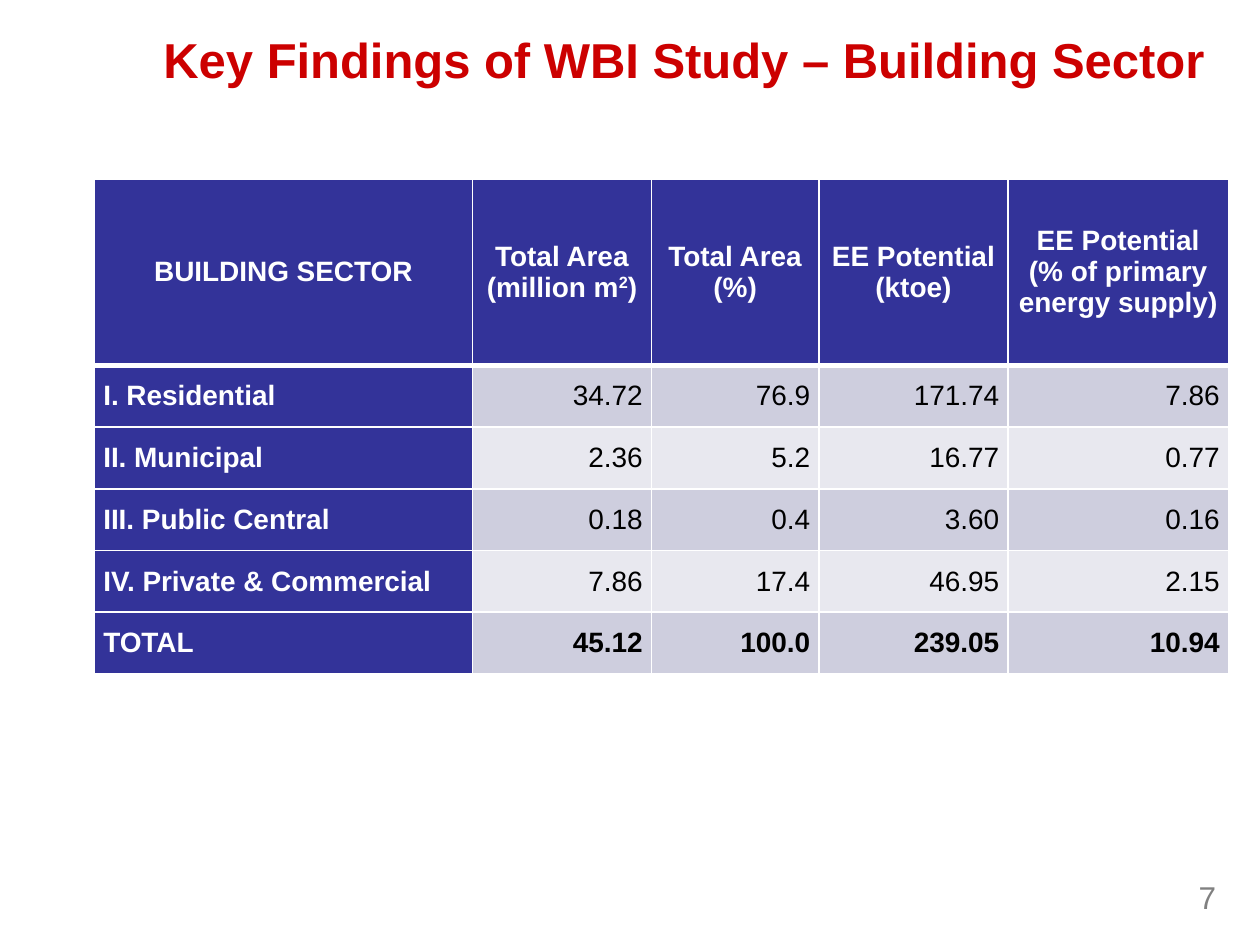
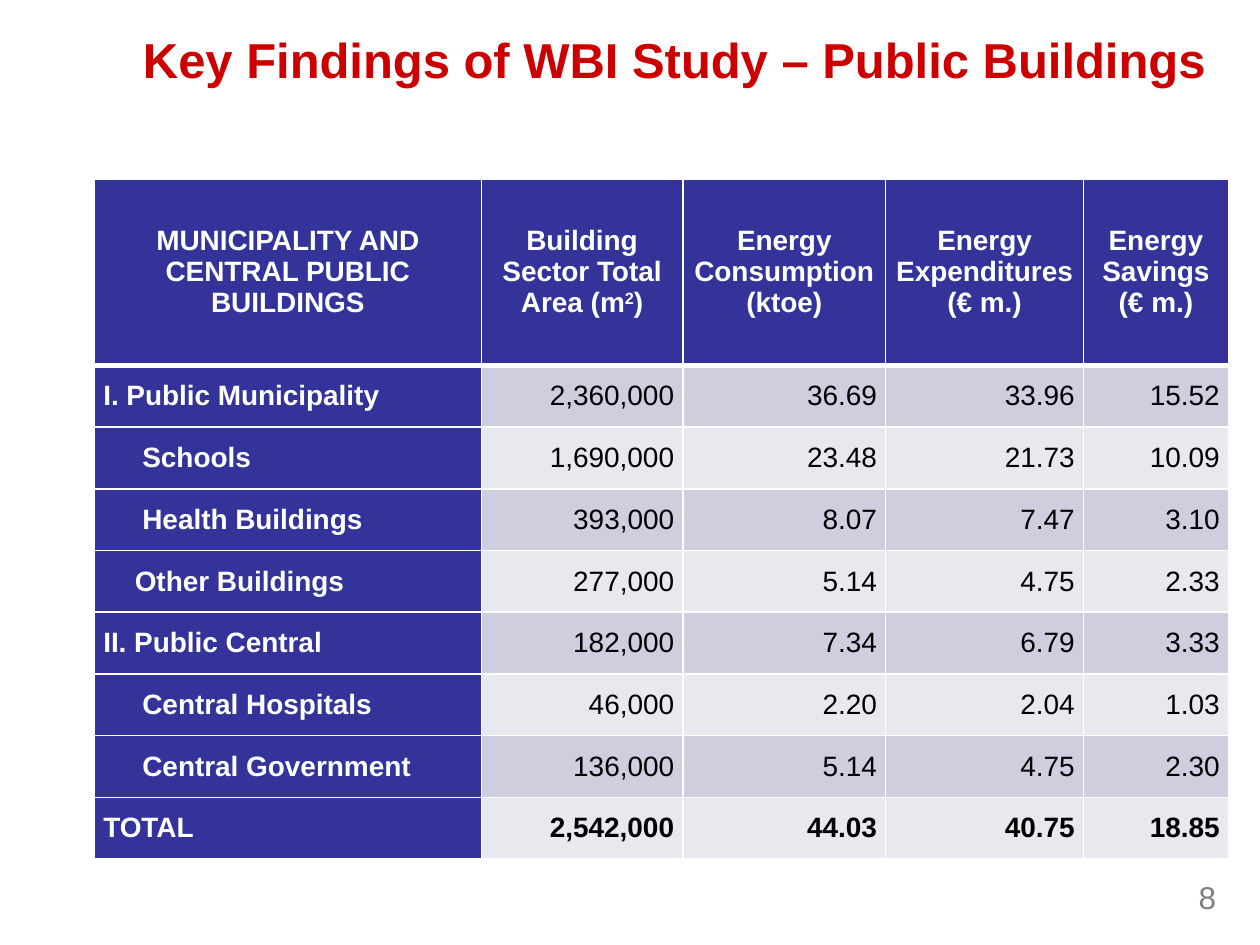
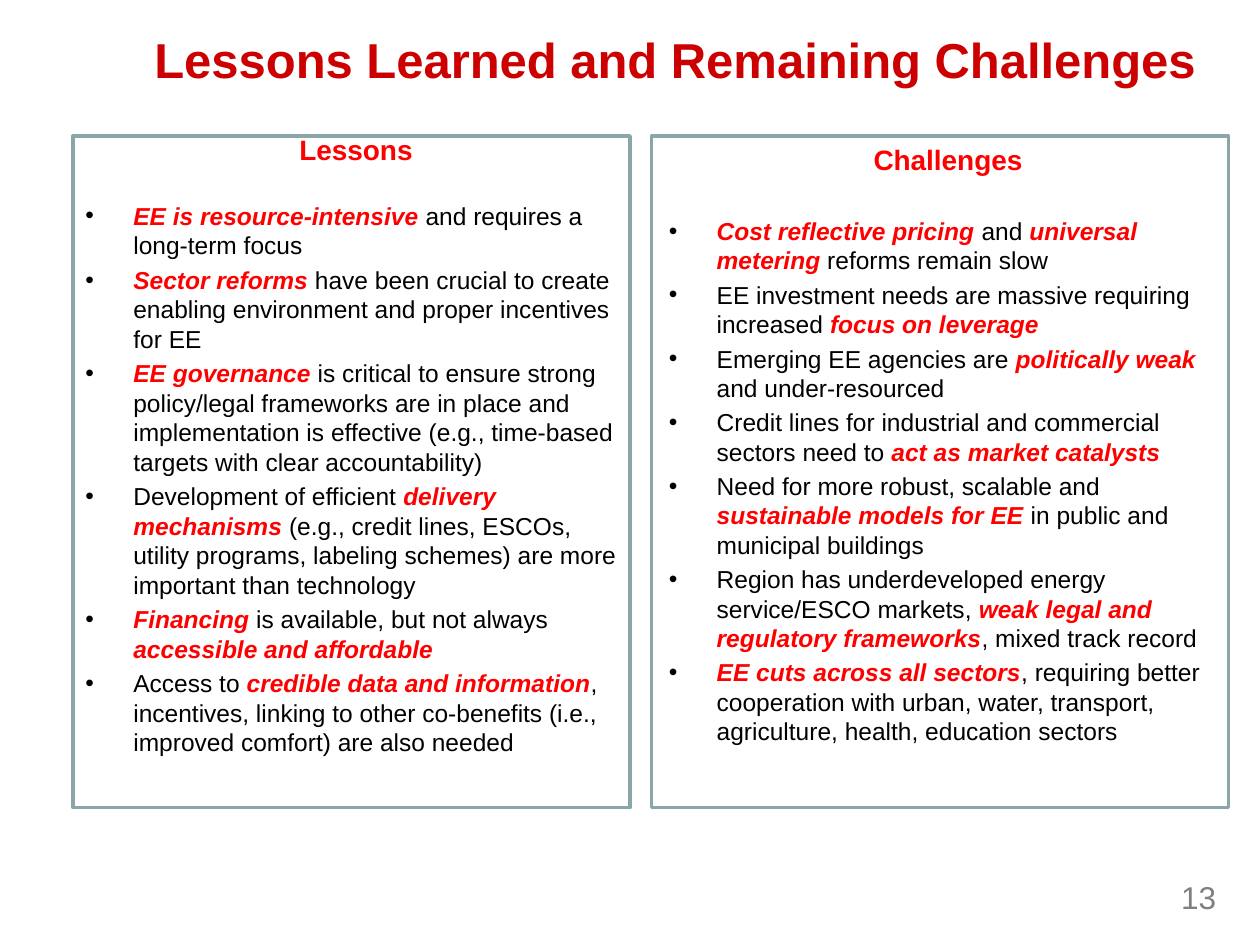
from lxml.etree import SubElement
from pptx import Presentation
from pptx.dml.color import RGBColor
from pptx.enum.shapes import MSO_SHAPE
from pptx.enum.text import MSO_ANCHOR, MSO_AUTO_SIZE, PP_ALIGN
from pptx.oxml import parse_xml
from pptx.oxml.ns import nsdecls, qn
from pptx.util import Inches, Pt

WHITE, BLACK, RED = "FFFFFF", "000000", "FF0000"
NAVY, FRAME = "333399", "8AA6A8"
BANDS = ("CECEDE", "E8E8EF")
TITLE_STYLE = {"size": 28, "color": "CC0000", "bold": True}
NUMBER_STYLE = {"size": 18, "color": "808080"}
LABEL_STYLE = {"size": 16, "color": WHITE, "bold": True}
VALUE_STYLE = {"size": 16, "color": BLACK, "bold": False}
TOTAL_STYLE = {"size": 16, "color": BLACK, "bold": True}
HEADING_STYLE = {"size": 16, "color": RED, "bold": True}
BODY_STYLE = {"size": 14, "color": BLACK}
STRESS_STYLE = {"size": 14, "color": RED, "bold": True, "italic": True}

HEADER_HEIGHT, ROW_HEIGHT = 1.48, 0.49
HANGING = 0.38

TABLE_PAGES = [
    {
        "title": "Key Findings of WBI Study – Building Sector",
        "title_place": (1.08, 0.17, 8.58, 0.58),
        "number": "7",
        "widths": (3, 1.42, 1.33, 1.5, 1.75),
        "header": ("BUILDING SECTOR", "Total Area (million m^2^)", "Total Area (%)",
                   "EE Potential (ktoe)", "EE Potential\n(% of primary energy supply)"),
        "indents": {},
        "rows": [
            ("I. Residential", "34.72", "76.9", "171.74", "7.86"),
            ("II. Municipal", "2.36", "5.2", "16.77", "0.77"),
            ("III. Public Central", "0.18", "0.4", "3.60", "0.16"),
            ("IV. Private & Commercial", "7.86", "17.4", "46.95", "2.15"),
            ("TOTAL", "45.12", "100.0", "239.05", "10.94"),
        ],
    },
    {
        "title": "Key Findings of WBI Study – Public Buildings",
        "title_place": (0.75, 0.17, 8.92, 0.58),
        "number": "8",
        "widths": (3.07, 1.6, 1.61, 1.57, 1.15),
        "header": ("MUNICIPALITY AND\nCENTRAL PUBLIC\nBUILDINGS",
                   "Building Sector Total Area (m^2^)", "Energy Consumption (ktoe)",
                   "Energy Expenditures (€ m.)", "Energy Savings\n(€ m.)"),
        "indents": {"Schools": 0.31, "Health Buildings": 0.31, "Other Buildings": 0.25,
                    "Central Hospitals": 0.31, "Central Government": 0.31},
        "rows": [
            ("I. Public Municipality", "2,360,000", "36.69", "33.96", "15.52"),
            ("Schools", "1,690,000", "23.48", "21.73", "10.09"),
            ("Health Buildings", "393,000", "8.07", "7.47", "3.10"),
            ("Other Buildings", "277,000", "5.14", "4.75", "2.33"),
            ("II. Public Central", "182,000", "7.34", "6.79", "3.33"),
            ("Central Hospitals", "46,000", "2.20", "2.04", "1.03"),
            ("Central Government", "136,000", "5.14", "4.75", "2.30"),
            ("TOTAL", "2,542,000", "44.03", "40.75", "18.85"),
        ],
    },
]

LESSONS_PAGE = {
    "title": "Lessons Learned and Remaining Challenges",
    "title_place": (0.67, 0.25, 8.92, 0.5),
    "number": "13",
    "panels": [
        {
            "heading": "Lessons",
            "frame": (0.58, 1.08, 4.42, 5.33),
            "place": (0.58, 1, 4.49, 5.33),
            "heading_gap": 20,
            "gap": 3,
            "points": [
                "*EE is resource-intensive *and requires a long-term focus",
                "*Sector reforms *have been crucial to create enabling environment "
                "and proper incentives for EE",
                "*EE governance *is critical to ensure strong policy/legal frameworks are in "
                "place and implementation is effective (e.g., time-based targets with clear "
                "accountability)",
                "Development of efficient *delivery mechanisms *(e.g., credit lines, ESCOs, "
                "utility programs, labeling schemes) are more important than technology",
                "*Financing* is available, but not always *accessible and affordable*",
                "Access to *credible data and information*, incentives, linking to other "
                "co-benefits (i.e., improved comfort) are also needed",
            ],
        },
        {
            "heading": "Challenges",
            "frame": (5.17, 1.08, 4.58, 5.33),
            "place": (5.21, 1.08, 4.63, 4.5),
            "heading_gap": 23,
            "gap": 2.8,
            "points": [
                "*Cost reflective pricing *and *universal metering *reforms remain slow",
                "EE investment needs are massive requiring increased *focus on leverage*",
                "Emerging EE agencies are *politically weak *and under-resourced",
                "Credit lines for industrial and commercial sectors need to "
                "*act as market catalysts*",
                "Need for more robust, scalable and *sustainable models for EE *in public "
                "and municipal buildings",
                "Region has underdeveloped energy service/ESCO markets, *weak legal and "
                "regulatory frameworks*, mixed track record",
                "*EE cuts across all sectors*, requiring better cooperation with urban, "
                "water, transport, agriculture, health, education sectors",
            ],
        },
    ],
}


def rgb(value):
    """Return the colour for a hex string."""
    return RGBColor.from_string(value)


def inches(values):
    """Turn a row of numbers into lengths."""
    return [Inches(value) for value in values]


def add_span(para, text, style):
    """Add one formatted run to a paragraph."""
    span = para.add_run()
    span.text = text
    values = {"name": "Arial", **style, "size": Pt(style["size"])}
    span.font.color.rgb = rgb(values.pop("color"))
    for name, value in values.items():
        setattr(span.font, name, value)
    return span


def write_lines(frame, text, style, align):
    """Write one paragraph per line, raising what stands between carets."""
    for index, line in enumerate(text.split("\n")):
        para = frame.add_paragraph() if index else frame.paragraphs[0]
        para.alignment = align
        for part, words in enumerate(line.split("^")):
            span = add_span(para, words, style)
            if part % 2:
                span.font._element.set("baseline", "30000")


def add_text_box(page, place):
    """Add a wrapping text box and return its frame."""
    frame = page.shapes.add_textbox(*inches(place)).text_frame
    frame.word_wrap = True
    return frame


def add_page(deck, content):
    """Add a page with its title and number."""
    page = deck.slides.add_slide(deck.slide_layouts[5])
    title = page.shapes.title
    title.left, title.top, title.width, title.height = inches(content["title_place"])
    frame = title.text_frame
    frame.auto_size = MSO_AUTO_SIZE.NONE
    frame.vertical_anchor = MSO_ANCHOR.BOTTOM
    write_lines(frame, content["title"], TITLE_STYLE, PP_ALIGN.RIGHT)
    number = add_text_box(page, (8.25, 6.92, 1.5, 0.43))
    write_lines(number, content["number"], NUMBER_STYLE, PP_ALIGN.RIGHT)
    return page


def fill_cell(cell, text, style, align, fill, bottom=1, top=1):
    """Write a cell and set its margins, white borders and fill."""
    cell.margin_left = cell.margin_right = Inches(0.07)
    cell.margin_top = cell.margin_bottom = 0
    cell.vertical_anchor = MSO_ANCHOR.MIDDLE
    write_lines(cell.text_frame, text, style, align)
    properties = cell._tc.get_or_add_tcPr()
    for side, width in (("L", 1), ("R", 1), ("T", top), ("B", bottom)):
        properties.append(parse_xml(
            f'<a:ln{side} {nsdecls("a")} w="{Pt(width)}"><a:solidFill>'
            f'<a:srgbClr val="{WHITE}"/></a:solidFill></a:ln{side}>'))
    cell.fill.solid()
    cell.fill.fore_color.rgb = rgb(fill)


def add_table_page(deck, content):
    """Add a page with a table of findings."""
    page = add_page(deck, content)
    rows, widths = content["rows"], content["widths"]
    height = HEADER_HEIGHT + ROW_HEIGHT * len(rows)
    table = page.shapes.add_table(
        len(rows) + 1, len(widths), *inches((0.75, 1.42, sum(widths), height))).table
    for column, width in zip(table.columns, widths):
        column.width = Inches(width)
    for index, row in enumerate(table.rows):
        row.height = Inches(ROW_HEIGHT if index else HEADER_HEIGHT)
    for column, text in enumerate(content["header"]):
        fill_cell(table.cell(0, column), text, LABEL_STYLE, PP_ALIGN.CENTER, NAVY, bottom=3)
    for index, (label, *values) in enumerate(rows):
        top = 1 if index else 3
        head = table.cell(index + 1, 0)
        fill_cell(head, label, LABEL_STYLE, PP_ALIGN.LEFT, NAVY, top=top)
        head.margin_left = Inches(0.07 + content["indents"].get(label, 0))
        style = TOTAL_STYLE if label == "TOTAL" else VALUE_STYLE
        for column, value in enumerate(values, 1):
            fill_cell(table.cell(index + 1, column), value, style, PP_ALIGN.RIGHT,
                      BANDS[index % 2], top=top)


def add_point(frame, text, gap):
    """Add a bulleted paragraph, stressing what stands between asterisks."""
    para = frame.add_paragraph()
    properties = para._p.get_or_add_pPr()
    properties.set("marL", str(Inches(HANGING)))
    properties.set("indent", str(-Inches(HANGING)))
    colour = SubElement(properties, qn("a:buClr"))
    SubElement(colour, qn("a:srgbClr"), val=BLACK)
    SubElement(properties, qn("a:buFont"), typeface="Arial")
    SubElement(properties, qn("a:buChar"), char="•")
    para.space_before = Pt(gap)
    for part, words in enumerate(text.split("*")):
        if words:
            add_span(para, words, STRESS_STYLE if part % 2 else BODY_STYLE)


def add_panel(page, panel):
    """Add a framed panel with a heading and bullets."""
    outline = page.shapes.add_shape(MSO_SHAPE.RECTANGLE, *inches(panel["frame"]))
    outline.shadow.inherit = False
    outline.fill.background()
    outline.line.color.rgb = rgb(FRAME)
    outline.line.width = Pt(2)
    frame = add_text_box(page, panel["place"])
    write_lines(frame, panel["heading"], HEADING_STYLE, PP_ALIGN.CENTER)
    for index, text in enumerate(panel["points"]):
        add_point(frame, text, panel["gap"] if index else panel["heading_gap"])


def main():
    """Build the deck and save it."""
    deck = Presentation()
    deck.slide_width, deck.slide_height = inches((10, 7.5))
    for content in TABLE_PAGES:
        add_table_page(deck, content)
    page = add_page(deck, LESSONS_PAGE)
    for panel in LESSONS_PAGE["panels"]:
        add_panel(page, panel)
    deck.save("out.pptx")


if __name__ == "__main__":
    main()
